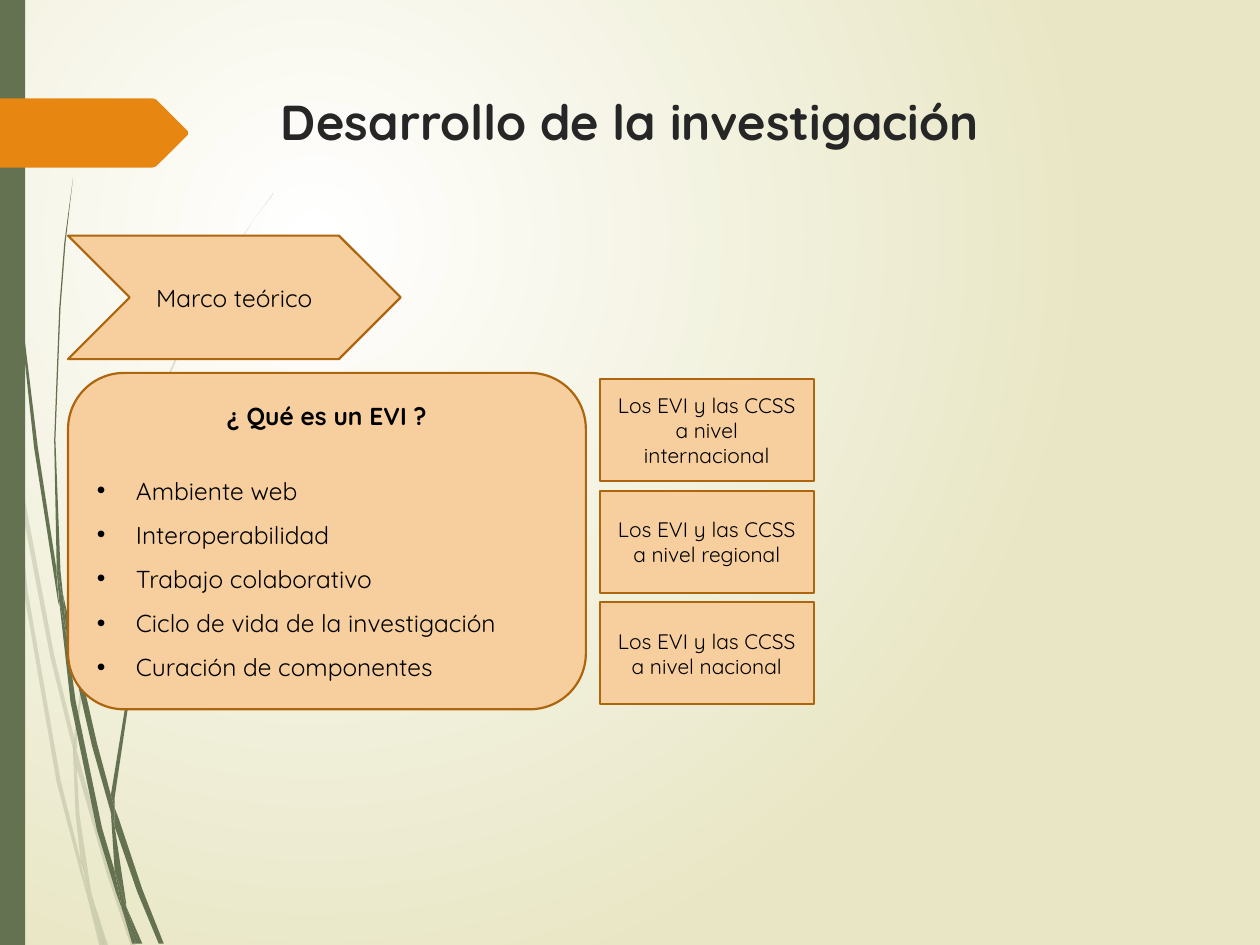
from lxml import etree
from pptx import Presentation
from pptx import util as u
from pptx.dml.color import RGBColor
from pptx.enum import shapes, text
from pptx.oxml import ns

COLORS = {"glow": "FFFFFF", "cream": "E8E6C4", "moss": "647252", "orange": "E78712",
          "peach": "F7CF9E", "rust": "AD650E", "title": "262626", "ink": "000000"}
FONT = "Quicksand"
HUNDREDTH = u.Inches(0.01)

# Grass outlines: corner points in hundredths of an inch
PALE_GRASS = [
    [(8, 350), (6, 322), (0, 282), (0, 299), (7, 344)],
    [(40, 522), (59, 599), (59, 586), (43, 520), (10, 345), (12, 376)],
    [(64, 607), (61, 596), (61, 610), (85, 694), (104, 751), (108, 751), (88, 692)],
    [(83, 751), (86, 751), (73, 711)],
    [(64, 683), (48, 619), (22, 469), (12, 376), (8, 350), (19, 470), (45, 621),
     (64, 693), (70, 714), (69, 707)],
    [(58, 599), (60, 646), (64, 683), (67, 692), (73, 711), (72, 706), (63, 646),
     (61, 610), (61, 608)],
    [(61, 584), (76, 462), (111, 349), (159, 245), (187, 198), (201, 175), (217, 154),
     (217, 153), (201, 175), (186, 197), (158, 244), (110, 348), (75, 461), (59, 584),
     (59, 586), (61, 596)],
    [(70, 714), (79, 751), (82, 751)],
    [(61, 608), (61, 610), (61, 596), (59, 586), (58, 599)],
    [(67, 692), (65, 683), (69, 707), (70, 714), (82, 751), (83, 751), (73, 711)],
]
DARK_GRASS = [
    [(5, 110), (14, 233), (27, 355), (46, 477), (47, 481), (45, 457), (45, 453),
     (30, 355), (15, 232), (6, 109), (4, 48), (3, 0), (2, 0), (3, 48)],
    [(73, 592), (88, 645), (88, 633), (88, 631), (77, 590), (50, 472), (53, 505)],
    [(94, 649), (91, 641), (91, 656), (109, 708), (126, 749), (130, 749), (113, 706)],
    [(91, 691), (81, 657), (60, 556), (53, 505), (47, 477), (56, 557), (77, 659),
     (92, 708), (97, 722), (96, 717)],
    [(50, 472), (48, 453), (44, 349), (48, 245), (52, 193), (58, 141), (51, 193),
     (47, 245), (43, 349), (45, 449), (49, 472)],
    [(110, 749), (113, 749), (100, 719)],
    [(47, 477), (53, 505), (50, 472), (49, 472), (45, 449), (45, 453)],
    [(91, 633), (103, 552), (131, 476), (169, 406), (191, 374), (203, 359), (216, 344),
     (215, 344), (203, 358), (191, 373), (168, 405), (129, 474), (101, 551), (88, 631),
     (91, 641)],
    [(97, 722), (105, 749), (108, 749)],
    [(88, 645), (91, 691), (96, 706), (100, 719), (100, 716), (91, 656), (90, 651)],
    [(88, 645), (90, 651), (91, 656), (91, 641), (88, 631), (88, 633)],
    [(96, 706), (91, 691), (96, 717), (97, 722), (108, 749), (110, 749), (100, 719)],
]
TITLE_TAG = [(149, 107), (124, 132), (121, 133), (0, 133), (0, 78), (121, 78),
             (124, 79), (149, 104)]


class SlideBuilder:
    def __init__(self, slide):
        self.slide = slide

    def background(self):
        fill = self.slide.background.fill
        fill.gradient()
        for stop, name in zip(fill.gradient_stops, ("glow", "cream")):
            stop.color.rgb = RGBColor.from_string(COLORS[name])
        gradient = self.slide.element.xpath(".//p:bgPr/a:gradFill")[0]
        for linear in gradient.findall(ns.qn("a:lin")):
            gradient.remove(linear)
        circle = etree.SubElement(gradient, ns.qn("a:path"), path="circle")
        etree.SubElement(circle, ns.qn("a:fillToRect"),
                         l="50000", t="50000", r="100000", b="100000")

    def paint(self, shape, fill, line=None):
        shape.shadow.inherit = False
        shape.fill.solid()
        shape.fill.fore_color.rgb = RGBColor.from_string(COLORS[fill])
        if line:
            shape.line.color.rgb = RGBColor.from_string(COLORS[line])
            shape.line.width = u.Pt(1.25)
        else:
            shape.line.fill.background()

    def outline(self, points, fill, opacity=100):
        builder = self.slide.shapes.build_freeform(*points[0], scale=HUNDREDTH)
        builder.add_line_segments(points[1:], close=True)
        shape = builder.convert_to_shape()
        self.paint(shape, fill)
        if opacity < 100:
            color = shape._element.spPr.find(".//" + ns.qn("a:srgbClr"))
            etree.SubElement(color, ns.qn("a:alpha"), val=str(opacity * 1000))

    def box(self, kind, left, top, width, height, fill="peach", line="rust"):
        shape = self.slide.shapes.add_shape(
            kind, u.Inches(left), u.Inches(top), u.Inches(width), u.Inches(height))
        self.paint(shape, fill, line)
        shape.text_frame.word_wrap = True
        shape.text_frame.vertical_anchor = text.MSO_ANCHOR.MIDDLE
        return shape.text_frame

    def add_words(self, paragraph, words, size, color="ink", bold=False,
                  align=text.PP_ALIGN.CENTER):
        paragraph.alignment = align
        run = paragraph.add_run()
        run.text = words
        run.font.name = FONT
        run.font.size = u.Pt(size)
        run.font.bold = bold
        run.font.color.rgb = RGBColor.from_string(COLORS[color])

    def bullet(self, frame, words, size):
        paragraph = frame.add_paragraph()
        self.add_words(paragraph, words, size, align=text.PP_ALIGN.LEFT)
        paragraph.line_spacing = 1.5
        props = paragraph._p.get_or_add_pPr()
        indent = u.Inches(0.31)
        props.set("marL", str(indent))
        props.set("indent", str(-indent))
        etree.SubElement(props, ns.qn("a:buFont"), typeface="Arial")
        etree.SubElement(props, ns.qn("a:buChar"), char="•")

    def title(self, words, left, top, width, height):
        heading = self.slide.shapes.title
        heading.left, heading.top = u.Inches(left), u.Inches(top)
        heading.width, heading.height = u.Inches(width), u.Inches(height)
        heading.text_frame.word_wrap = True
        heading.text_frame.vertical_anchor = text.MSO_ANCHOR.TOP
        self.add_words(heading.text_frame.paragraphs[0], words, 28, "title", True,
                       text.PP_ALIGN.LEFT)


def main():
    deck = Presentation()
    deck.slide_width, deck.slide_height = u.Inches(10), u.Inches(7.5)
    page = SlideBuilder(deck.slides.add_slide(deck.slide_layouts[5]))
    kinds = shapes.MSO_SHAPE

    # Backdrop: gradient, grass, side band and title tag
    page.background()
    for blade in PALE_GRASS:
        page.outline(blade, "moss", opacity=20)
    for blade in DARK_GRASS:
        page.outline(blade, "moss")
    page.box(kinds.RECTANGLE, 0, 0, 0.2, 7.5, "moss", None)
    page.outline(TITLE_TAG, "orange")

    # Title and section chevron
    page.title("Desarrollo de la investigación", 2.13, 0.68, 7.21, 1.4)
    section = page.box(kinds.CHEVRON, 0.54, 1.87, 2.64, 0.98)
    page.add_words(section.paragraphs[0], "Marco teórico", 14)

    # Definition panel
    definition = page.box(kinds.ROUNDED_RECTANGLE, 0.54, 2.96, 4.11, 2.67)
    question = definition.paragraphs[0]
    page.add_words(question, "¿ Qué es un EVI ?", 14, bold=True)
    question.space_after = u.Pt(17.5)
    for feature in ("Ambiente web", "Interoperabilidad", "Trabajo colaborativo",
                    "Ciclo de vida de la investigación", "Curación de componentes"):
        page.bullet(definition, feature, 14)

    # Levels of study
    for row, level in enumerate(("internacional", "regional", "nacional")):
        scope = page.box(kinds.RECTANGLE, 4.76, 3.01 + row * 0.885, 1.7, 0.81)
        page.add_words(scope.paragraphs[0], f"Los EVI y las CCSS a nivel {level}", 12)

    deck.save("out.pptx")


if __name__ == "__main__":
    main()
